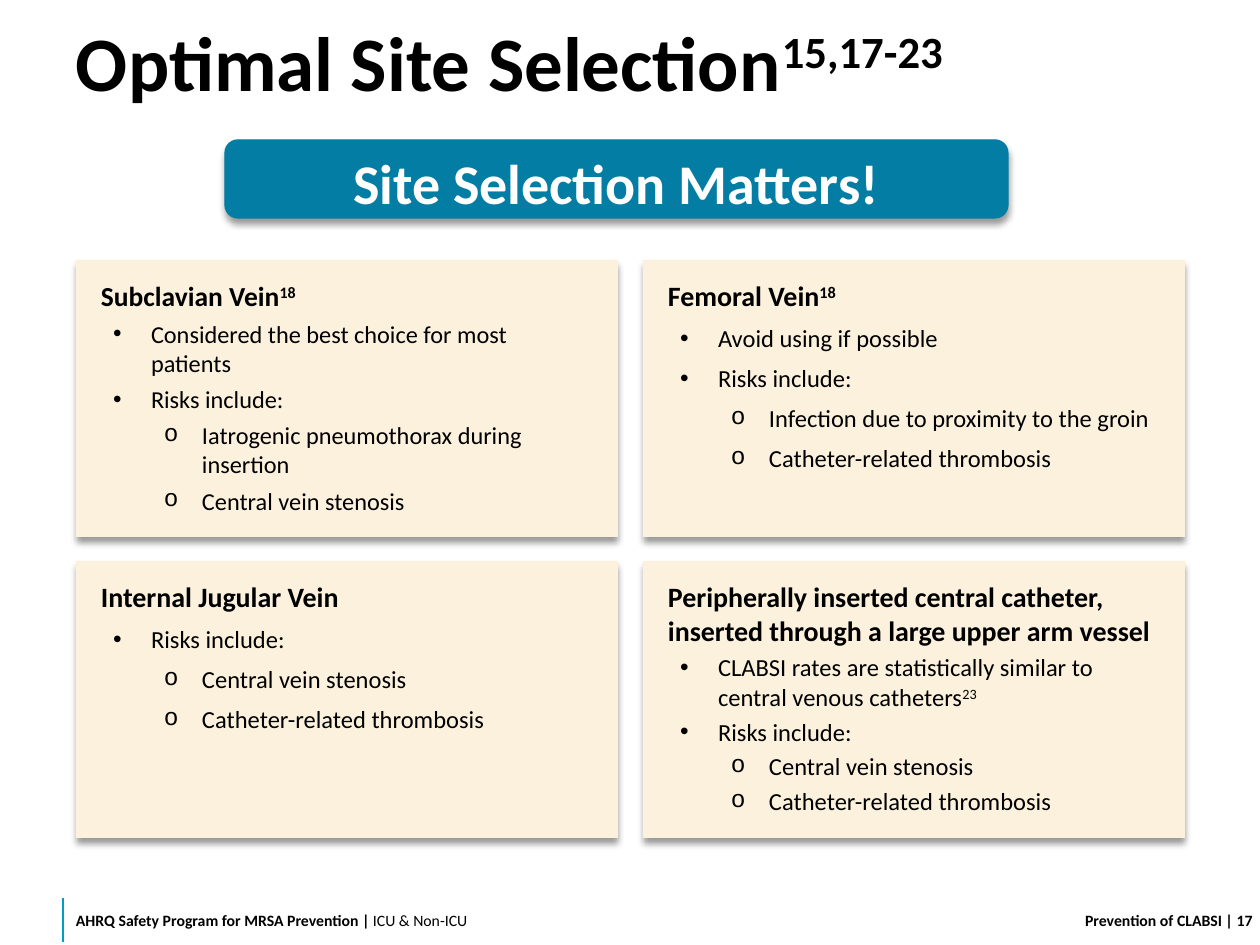
from lxml.etree import SubElement
from pptx import Presentation
from pptx.dml.color import RGBColor
from pptx.enum.shapes import MSO_CONNECTOR, MSO_SHAPE
from pptx.enum.text import MSO_ANCHOR, MSO_AUTO_SIZE, PP_ALIGN
from pptx.oxml.ns import qn
from pptx.util import Emu, Inches, Pt

SCALE = Inches(1) / 126  # EMU per px
FONT = "Calibri"
BLACK = RGBColor(0x00, 0x00, 0x00)
WHITE = RGBColor(0xFF, 0xFF, 0xFF)
TEAL = RGBColor(0x03, 0x7D, 0xA3)
TEAL_EDGE = RGBColor(0x00, 0x7D, 0xA3)
CYAN = RGBColor(0x00, 0x9E, 0xC2)
CREAM = RGBColor(0xFC, 0xF1, 0xDD)

# Panel grid
PANEL_LEFT, PANEL_TOP = 76, 260
PANEL_WIDTH, PANEL_HEIGHT = 542, 277
COLUMN_STEP, ROW_STEP = 567, 301
PANEL_INSETS = (25, 19, 25, 19)
BULLETS = {1: ("•", "Arial", 50), 2: ("o", "Courier New", 101)}
HANGING = -38

# Each panel: heading size, item size, space before, lines of (level, text, superscript)
PANELS = [
    (15.7, 13.9, 4, [
        (0, "Subclavian Vein", "18"),
        (1, "Considered the best choice for most patients", ""),
        (1, "Risks include:", ""),
        (2, "Iatrogenic pneumothorax during insertion", ""),
        (2, "Central vein stenosis", ""),
    ]),
    (16, 14, 6, [
        (0, "Femoral Vein", "18"),
        (1, "Avoid using if possible", ""),
        (1, "Risks include:", ""),
        (2, "Infection due to proximity to the groin", ""),
        (2, "Catheter-related thrombosis", ""),
    ]),
    (16, 14, 6, [
        (0, "Internal Jugular Vein", ""),
        (1, "Risks include:", ""),
        (2, "Central vein stenosis", ""),
        (2, "Catheter-related thrombosis", ""),
    ]),
    (16, 14, 3, [
        (0, "Peripherally inserted central catheter, "
            "inserted through a large upper arm vessel", ""),
        (1, "CLABSI rates are statistically similar to central venous catheters", "23"),
        (1, "Risks include:", ""),
        (2, "Central vein stenosis", ""),
        (2, "Catheter-related thrombosis", ""),
    ]),
]


def px(length):
    return Emu(round(length * SCALE))


def place(box, left, top, width, height):
    box.left, box.top, box.width, box.height = map(px, (left, top, width, height))


def prepare_frame(box, insets, anchor=MSO_ANCHOR.MIDDLE):
    frame = box.text_frame
    frame.word_wrap = True
    frame.auto_size = MSO_AUTO_SIZE.NONE
    frame.vertical_anchor = anchor
    (frame.margin_left, frame.margin_top,
     frame.margin_right, frame.margin_bottom) = map(px, insets)
    return frame


def add_span(para, text, size, bold=True, color=BLACK, raised=False):
    span = para.add_run()
    span.text = text
    font = span.font
    font.name, font.size, font.bold = FONT, Pt(size), bold
    font.color.rgb = color
    if raised:
        span._r.get_or_add_rPr().set("baseline", "30000")


def add_shadow(box):
    box.shadow.inherit = False
    effects = box._element.spPr.find(qn("a:effectLst"))
    shadow = SubElement(effects, qn("a:outerShdw"), blurRad=str(Pt(4)),
                        dist=str(Pt(3)), dir="5400000", rotWithShape="0")
    color = SubElement(shadow, qn("a:srgbClr"), val=str(BLACK))
    SubElement(color, qn("a:alpha"), val="40000")


def set_bullet(para, level):
    properties = para._p.get_or_add_pPr()
    if level == 0:
        properties.set("marL", "0")
        properties.set("indent", "0")
        SubElement(properties, qn("a:buNone"))
        return
    mark, typeface, margin = BULLETS[level]
    para.level = level - 1
    properties.set("marL", str(px(margin)))
    properties.set("indent", str(px(HANGING)))
    SubElement(properties, qn("a:buFont"), typeface=typeface)
    SubElement(properties, qn("a:buChar"), char=mark)


def fill_title(title):
    place(title, 63, 0, 1134, 126)
    para = prepare_frame(title, (13, 13, 13, 6)).paragraphs[0]
    para.alignment = PP_ALIGN.LEFT
    para.line_spacing = 0.9
    add_span(para, "Optimal Site Selection", 44)
    add_span(para, "15,17-23", 44, raised=True)


def add_banner(page):
    box = page.shapes.add_shape(MSO_SHAPE.ROUNDED_RECTANGLE,
                                px(225), px(140), px(783), px(78))
    box.fill.solid()
    box.fill.fore_color.rgb = TEAL
    box.line.color.rgb = TEAL_EDGE
    box.line.width = Pt(0.75)
    add_shadow(box)
    para = prepare_frame(box, PANEL_INSETS).paragraphs[0]
    para.alignment = PP_ALIGN.CENTER
    para.line_spacing = 1.1
    add_span(para, "Site Selection Matters!", 32, color=WHITE)


def fill_panel(box, position, panel):
    heading_size, item_size, gap, lines = panel
    row, column = divmod(position, 2)
    place(box, PANEL_LEFT + column * COLUMN_STEP, PANEL_TOP + row * ROW_STEP,
          PANEL_WIDTH, PANEL_HEIGHT)
    box.fill.solid()
    box.fill.fore_color.rgb = CREAM
    box.line.fill.background()
    add_shadow(box)
    frame = prepare_frame(box, PANEL_INSETS, MSO_ANCHOR.TOP)
    for number, (level, text, note) in enumerate(lines):
        para = frame.add_paragraph() if number else frame.paragraphs[0]
        set_bullet(para, level)
        para.alignment = PP_ALIGN.LEFT
        para.space_before = Pt(gap if number else 0)
        size, bold = (item_size, False) if level else (heading_size, True)
        add_span(para, text, size, bold)
        if note:
            add_span(para, note, size, bold, raised=True)


def add_footer_text(page, left, width, insets, spans, align=PP_ALIGN.LEFT):
    box = page.shapes.add_textbox(px(left), px(895), px(width), px(50))
    para = prepare_frame(box, insets).paragraphs[0]
    para.alignment = align
    for text, bold in spans:
        add_span(para, text, 9, bold)


def add_footer_rule(page):
    rule = page.shapes.add_connector(MSO_CONNECTOR.STRAIGHT,
                                     px(63), px(898), px(63), px(942))
    rule.line.color.rgb = CYAN
    rule.line.width = Pt(1)
    SubElement(rule._element.spPr, qn("a:effectLst"))


def main():
    deck = Presentation()
    deck.slide_width, deck.slide_height = px(1260), px(945)
    # Comparison layout: a title and four body placeholders
    page = deck.slides.add_slide(deck.slide_layouts[4])

    # Title and banner
    fill_title(page.shapes.title)
    add_banner(page)

    # Four vein panels
    for position, panel in enumerate(PANELS):
        fill_panel(page.placeholders[position + 1], position, panel)

    # Footer
    add_footer_rule(page)
    add_footer_text(page, 63, 517, (13, 0, 13, 0),
                    [("AHRQ Safety Program for MRSA Prevention | ", True),
                     ("ICU & Non-ICU", False)])
    add_footer_text(page, 895, 327, (13, 6, 0, 6),
                    [("Prevention of CLABSI", True)], PP_ALIGN.RIGHT)
    add_footer_text(page, 1222, 38, (0, 6, 0, 6), [(" | 17", True)])

    deck.save("out.pptx")


if __name__ == "__main__":
    main()
